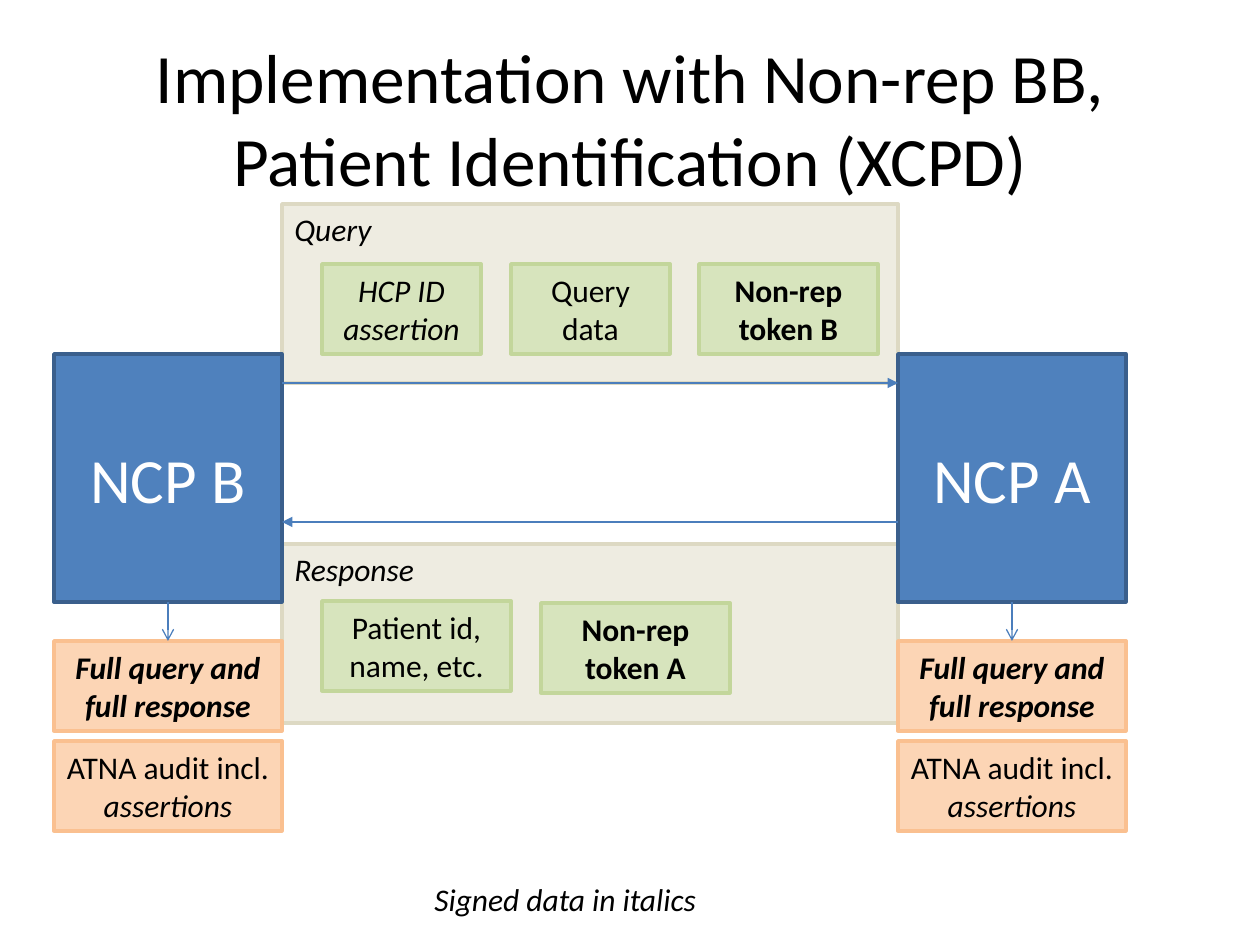
from lxml import etree
from pptx import Presentation
from pptx.dml.color import RGBColor
from pptx.enum.shapes import MSO_CONNECTOR, MSO_SHAPE
from pptx.enum.text import MSO_ANCHOR, MSO_AUTO_SIZE, PP_ALIGN
from pptx.oxml.ns import qn
from pptx.util import Pt

RECT, STRAIGHT = MSO_SHAPE.RECTANGLE, MSO_CONNECTOR.STRAIGHT
TOP, MIDDLE = MSO_ANCHOR.TOP, MSO_ANCHOR.MIDDLE
LEFT, CENTER = PP_ALIGN.LEFT, PP_ALIGN.CENTER
FIT_SHAPE, NO_FIT = MSO_AUTO_SIZE.SHAPE_TO_FIT_TEXT, MSO_AUTO_SIZE.NONE

BLACK = RGBColor(0x00, 0x00, 0x00)
WHITE = RGBColor(0xFF, 0xFF, 0xFF)
ARROW = RGBColor(0x4B, 0x7E, 0xBC)
# (fill, line) pairs
BLUE = RGBColor(0x4F, 0x81, 0xBD), RGBColor(0x3A, 0x5F, 0x8C)
TAN = RGBColor(0xEE, 0xEC, 0xE1), RGBColor(0xDD, 0xD9, 0xC3)
GREEN = RGBColor(0xD7, 0xE4, 0xBD), RGBColor(0xC3, 0xD6, 0x9B)
ORANGE = RGBColor(0xFC, 0xD5, 0xB5), RGBColor(0xFA, 0xC0, 0x90)

FONT = "Calibri"
PX_PER_INCH = 126
CHIP_H = 90
NODE_W, NODE_H = 228, 248
NODE_Y = 354
NODE_B_X, NODE_A_X = 54, 898
PANEL_X, PANEL_H = NODE_B_X + NODE_W, 179
PANEL_W = NODE_A_X - PANEL_X


def px(n):
    return round(n * 914400 / PX_PER_INCH)


def box(*lengths):
    return [px(n) for n in lengths]


def write(tf, runs, size=18, color=BLACK, align=CENTER, anchor=MIDDLE):
    """Fill a text frame with (text, style) runs; style holds b and/or i."""
    tf.vertical_anchor = anchor
    p = tf.paragraphs[0]
    p.alignment = align
    for text, style in runs:
        r = p.add_run()
        r.text = text
        r.font.name, r.font.size = FONT, Pt(size)
        r.font.color.rgb = color
        r.font.bold, r.font.italic = "b" in style, "i" in style


def add_box(s, bounds, colors, runs, **text_format):
    sp = s.shapes.add_shape(RECT, *box(*bounds))
    sp.shadow.inherit = False
    sp.fill.solid()
    sp.fill.fore_color.rgb, sp.line.color.rgb = colors
    sp.line.width = Pt(2)
    sp.text_frame.word_wrap = True
    write(sp.text_frame, runs, **text_format)
    return sp


def add_arrow(s, x1, y1, x2, y2, end, kind):
    """Draw a line with an arrowhead at end: headEnd or tailEnd."""
    line = s.shapes.add_connector(STRAIGHT, *box(x1, y1, x2, y2))
    line.line.color.rgb = ARROW
    line.line.width = Pt(0.75)
    ln = line.line._get_or_add_ln()
    etree.SubElement(ln, qn("a:" + end), type=kind)
    etree.SubElement(line._element.spPr, qn("a:effectLst"))
    return line


def add_title(s, x, y, w, h):
    title = s.shapes.title
    title.left, title.top, title.width, title.height = box(x, y, w, h)
    title.text_frame.auto_size = NO_FIT
    text = "Implementation with Non-rep BB, Patient Identification (XCPD)"
    write(title.text_frame, [(text, "")], size=39.6)


def add_panel(s, x, y, w, h, name, chips):
    """Draw a message panel; chips are (left, top, width, text, style)."""
    add_box(s, (x, y, w, h), TAN, [(name, "i")], align=LEFT, anchor=TOP)
    for left, top, width, text, style in chips:
        add_box(s, (x + left, y + top, width, CHIP_H), GREEN, [(text, style)])


def add_node(s, x, y, w, h, name):
    """Draw a contact point with the records it keeps below it."""
    node = add_box(s, (x, y, w, h), BLUE, [(name, "")], size=36, color=WHITE)
    record_y = y + h + 39
    record = add_box(s, (x, record_y, w, CHIP_H), ORANGE,
                     [("Full query and full response", "bi")])
    add_box(s, (x, record_y + CHIP_H + 10, w, CHIP_H), ORANGE,
            [("ATNA audit incl. ", ""), ("assertions", "i")])
    arrow = add_arrow(s, x + w // 2, y + h, x + w // 2, record_y,
                      "tailEnd", "arrow")
    arrow.begin_connect(node, 2)
    arrow.end_connect(record, 0)


def add_note(s, x, y, w, h):
    tf = s.shapes.add_textbox(*box(x, y, w, h)).text_frame
    tf.word_wrap = False
    tf.auto_size = FIT_SHAPE
    write(tf, [("Signed data in italics", "i")], align=LEFT, anchor=TOP)


def main():
    prs = Presentation()
    prs.slide_width, prs.slide_height = box(1260, 945)
    s = prs.slides.add_slide(prs.slide_layouts[5])

    add_title(s, 63, 38, 1134, 158)
    add_panel(s, PANEL_X, 544, PANEL_W, PANEL_H, "Response", [
        (40, 57, 189, "Patient id, name, etc.", ""),
        (259, 59, 189, "Non-rep token A", "b"),
    ])
    add_panel(s, PANEL_X, 204, PANEL_W, PANEL_H, "Query", [
        (40, 60, 159, "HCP ID assertion", "i"),
        (229, 60, 159, "Query data", ""),
        (417, 60, 179, "Non-rep token B", "b"),
    ])
    add_node(s, NODE_B_X, NODE_Y, NODE_W, NODE_H, "NCP B")
    add_node(s, NODE_A_X, NODE_Y, NODE_W, NODE_H, "NCP A")
    for y, end in ((383, "tailEnd"), (522, "headEnd")):
        add_arrow(s, PANEL_X, y, NODE_A_X, y, end, "triangle")
    add_note(s, 422, 874, 290, 50)

    prs.save("out.pptx")


if __name__ == "__main__":
    main()
